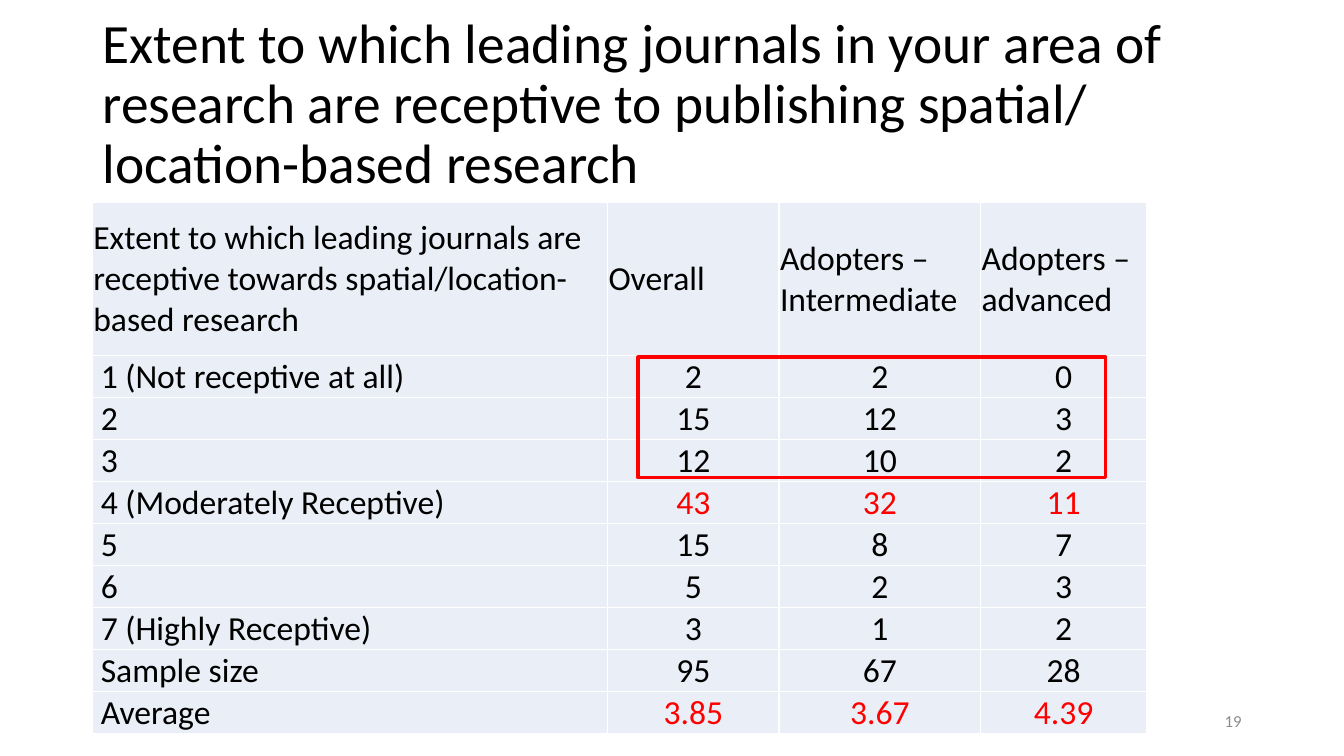
import pptx
import pptx.dml.color
import pptx.enum.shapes
import pptx.enum.text
import pptx.oxml
import pptx.oxml.ns
import pptx.util

Pt = pptx.util.Pt
RGBColor = pptx.dml.color.RGBColor
Align = pptx.enum.text.PP_ALIGN
Anchor = pptx.enum.text.MSO_ANCHOR

BLACK = RGBColor(0x00, 0x00, 0x00)
WHITE = RGBColor(0xFF, 0xFF, 0xFF)
RED = RGBColor(0xFF, 0x00, 0x00)
GREY = RGBColor(0x8C, 0x8C, 0x8C)
PALE_BLUE = RGBColor(0xEA, 0xEF, 0xF7)

QUESTION = ("Extent to which leading journals in your area of research are "
            "receptive to publishing spatial/ location-based research")
RESPONSES = [
    ("Extent to which leading journals are receptive towards "
     "spatial/location-based research",
     "Overall", "Adopters – Intermediate", "Adopters – advanced"),
    ("1 (Not receptive at all)", "2", "2", "0"),
    ("2", "15", "12", "3"),
    ("3", "12", "10", "2"),
    ("4 (Moderately Receptive)", "43", "32", "11"),
    ("5", "15", "8", "7"),
    ("6", "5", "2", "3"),
    ("7 (Highly Receptive)", "3", "1", "2"),
    ("Sample size", "95", "67", "28"),
    ("Average", "3.85", "3.67", "4.39"),
]
EMPHASISED = ("4 (Moderately Receptive)", "Average")
COLUMN_WIDTHS = (368, 122.5, 144, 118.5)
HEADER_HEIGHT, ROW_HEIGHT = 109, 30


def apply(target, formats):
    """Set every attribute named in formats on target."""
    for attribute, value in formats.items():
        setattr(target, attribute, value)


def write(frame, text, size, color, align):
    """Put one formatted paragraph into a text frame."""
    frame.text = text
    paragraph = frame.paragraphs[0]
    paragraph.alignment = align
    font = paragraph.runs[0].font
    apply(font, {"size": Pt(size), "name": "Calibri", "bold": False})
    font.color.rgb = color
    return paragraph


def place(part, box):
    """Move a shape to a box given in points."""
    apply(part, dict(zip(("left", "top", "width", "height"), map(Pt, box))))


def add_question(slide, box):
    """Fill the title placeholder with the survey question."""
    question = slide.shapes.title
    place(question, box)
    apply(question.text_frame, {
        "word_wrap": True, "vertical_anchor": Anchor.MIDDLE,
        "auto_size": pptx.enum.text.MSO_AUTO_SIZE.NONE})
    paragraph = write(question.text_frame, QUESTION, 39.6, BLACK, Align.LEFT)
    paragraph.line_spacing = 0.9


def add_page_number(slide, box):
    """Write the page number at the right of its box."""
    page_number = slide.shapes.add_textbox(*map(Pt, box))
    apply(page_number.text_frame,
          {"word_wrap": True, "vertical_anchor": Anchor.MIDDLE})
    write(page_number.text_frame, "19", 12, GREY, Align.RIGHT)


def add_borders(cell):
    """Draw a thin white line on all four sides of a cell."""
    properties = cell._tc.get_or_add_tcPr()
    for side in ("lnL", "lnR", "lnT", "lnB"):
        properties.append(pptx.oxml.parse_xml(
            f'<a:{side} {pptx.oxml.ns.nsdecls("a")} w="{Pt(1)}"><a:solidFill>'
            f'<a:srgbClr val="{WHITE}"/></a:solidFill></a:{side}>'))


def add_responses(slide, left, top):
    """Build the table of responses from its top left corner."""
    height = HEADER_HEIGHT + ROW_HEIGHT * (len(RESPONSES) - 1)
    responses = slide.shapes.add_table(
        len(RESPONSES), len(COLUMN_WIDTHS), Pt(left), Pt(top),
        Pt(sum(COLUMN_WIDTHS)), Pt(height)).table
    apply(responses, {"first_row": False, "horz_banding": False})
    for column, width in zip(responses.columns, COLUMN_WIDTHS):
        column.width = Pt(width)
    for r, answers in enumerate(RESPONSES):
        responses.rows[r].height = Pt(ROW_HEIGHT if r else HEADER_HEIGHT)
        for c, answer in enumerate(answers):
            cell = responses.cell(r, c)
            is_label, is_count = r > 0 and c == 0, r > 0 and c > 0
            apply(cell, {
                "vertical_anchor": Anchor.MIDDLE,
                "margin_left": Pt(6 if is_label else 0.7),
                "margin_right": Pt(0.7),
                "margin_top": Pt(0.7),
                "margin_bottom": Pt(0)})
            color = RED if is_count and answers[0] in EMPHASISED else BLACK
            write(cell.text_frame, answer, 24, color,
                  Align.CENTER if is_count else Align.LEFT)
            add_borders(cell)
            cell.fill.solid()
            cell.fill.fore_color.rgb = PALE_BLUE


def add_low_scores_frame(slide, box):
    """Outline the counts of the low scores in red."""
    low_scores = slide.shapes.add_shape(
        pptx.enum.shapes.MSO_SHAPE.RECTANGLE, *map(Pt, box))
    low_scores.shadow.inherit = False
    low_scores.fill.background()
    low_scores.line.color.rgb = RED
    low_scores.line.width = Pt(2.25)


def main():
    """Build and save the slide."""
    deck = pptx.Presentation()
    apply(deck, {"slide_width": Pt(960), "slide_height": Pt(540)})
    slide = deck.slides.add_slide(deck.slide_layouts.get_by_name("Title Only"))
    add_question(slide, (66, 18, 828, 115))
    add_page_number(slide, (678, 500.5, 216, 28.75))
    add_responses(slide, 66, 144.75)
    add_low_scores_frame(slide, (455.75, 255, 334, 86.4))
    deck.save("out.pptx")


if __name__ == "__main__":
    main()
